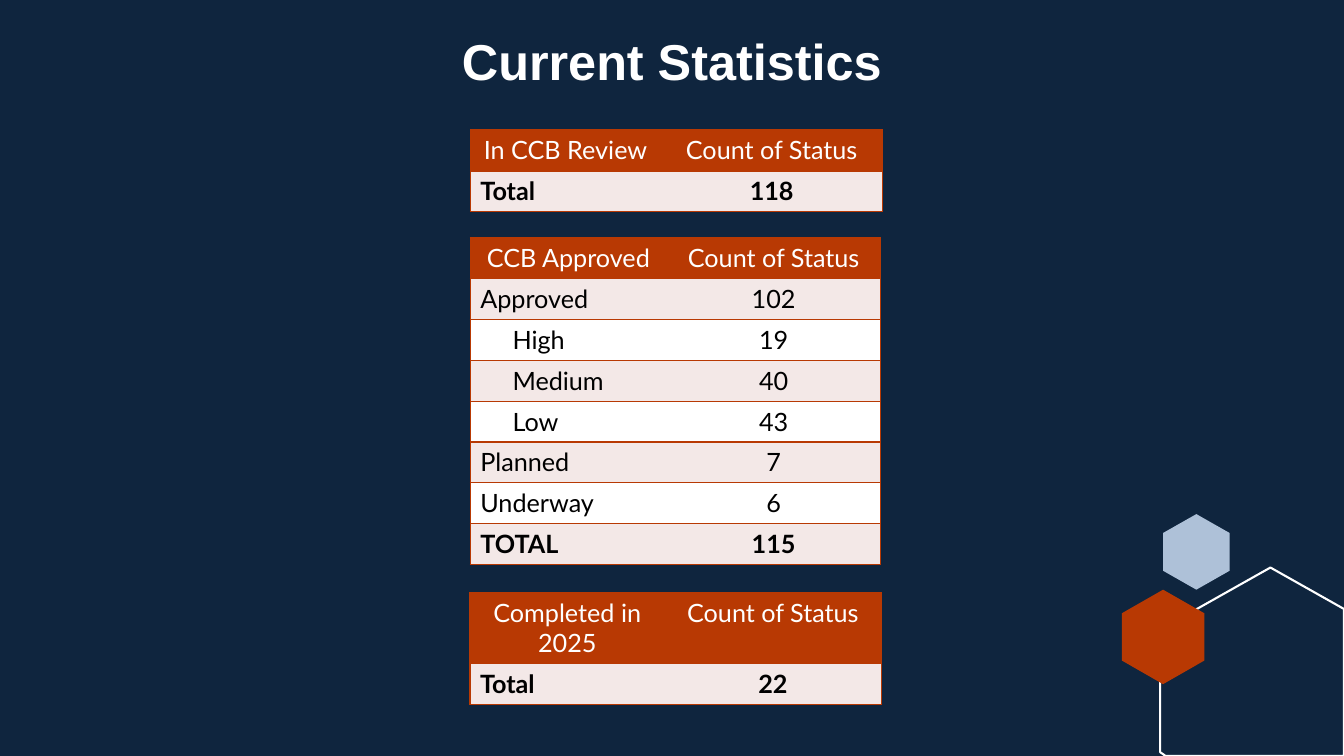
from lxml.etree import SubElement as Sub
from pptx import Presentation
from pptx.dml.color import RGBColor
from pptx.enum.text import MSO_ANCHOR as Anchor, PP_ALIGN as Align
from pptx.oxml.ns import qn
from pptx.util import Pt

NAVY, RUST, PALE, BLUE = "0F253E", "B83903", "F3E8E7", "AEC1D8"
WHITE, BLACK = "FFFFFF", "000000"
HEX = [(0.5, 0), (1, 0.25), (1, 0.75), (0.5, 1), (0, 0.75), (0, 0.25)]
CUT = [(0.6, 0), (1, 0.22), (1, 1), (0.03, 1), (0, 0.98), (0, 0.33)]
STATUS = "Count of Status"
REVIEW = [("In CCB Review", STATUS), ("Total", "118")]
PASSED = [
    ("CCB Approved", STATUS),
    ("Approved", "102"),
    ("High", "19"),
    ("Medium", "40"),
    ("Low", "43"),
    ("Planned", "7"),
    ("Underway", "6"),
    ("TOTAL", "115"),
]
DONE = [("Completed in 2025", STATUS), ("Total", "22")]
NESTED = {"High", "Medium", "Low"}


def paint(fmt, color):
    """Give a fill or a font colour format a solid hex colour."""
    fmt.rgb = RGBColor.from_string(color)


def style(par, font, size, color, bold, align):
    """Format a paragraph and its runs."""
    par.alignment = align
    for run in par.runs:
        run.font.name, run.font.size, run.font.bold = font, Pt(size), bold
        paint(run.font.color, color)


def add_outline(slide, box, points, fill=None, line=None):
    """Draw a closed outline from points given as fractions of the box."""
    left, top, width, height = box
    spots = [(Pt(left + x * width), Pt(top + y * height)) for x, y in points]
    pen = slide.shapes.build_freeform(*spots[0])
    pen.add_line_segments(spots[1:], close=True)
    shape = pen.convert_to_shape()
    shape.shadow.inherit = False
    if fill:
        shape.fill.solid()
        paint(shape.fill.fore_color, fill)
    else:
        shape.fill.background()
    if line:
        paint(shape.line.color, line)
        shape.line.width = Pt(1.5)
    else:
        shape.line.fill.background()


def add_decor(slide, box):
    """Place the three hexagons of the corner inside the box."""
    left, top, width, height = box
    add_outline(slide, (left + 29.5, top, 47.5, 54), HEX, BLUE)
    add_outline(slide, (left + 27.4, top + 38.2, width - 27.4, height - 38.2), CUT, line=WHITE)
    add_outline(slide, (left, top + 54, 59, 67.5), HEX, RUST)


def add_title(slide, box, text):
    """Place the centred heading in the box."""
    frame = slide.shapes.add_textbox(*map(Pt, box)).text_frame
    frame.word_wrap = True
    frame.vertical_anchor = Anchor.MIDDLE
    frame.text = text
    par = frame.paragraphs[0]
    par.line_spacing = 0.9
    style(par, "Arial", 36, WHITE, True, Align.CENTER)


def set_edges(cell, col):
    """Draw the outer and row lines of a cell, with none between columns."""
    props = cell._tc.get_or_add_tcPr()
    bare = "lnL" if col else "lnR"
    for spot, side in enumerate(("lnL", "lnR", "lnT", "lnB")):
        edge = Sub(props, qn(f"a:{side}"), w=str(Pt(1)))
        if side == bare:
            Sub(edge, qn("a:noFill"))
        else:
            Sub(Sub(edge, qn("a:solidFill")), qn("a:srgbClr"), val=RUST)
        props.insert(spot, edge)


def add_stats(slide, box, split, rows, head=29.2):
    """Place a two-column table in the box, with its first column split wide."""
    left, top, width, height = box
    frame = slide.shapes.add_table(len(rows), 2, *map(Pt, box))
    table = frame.table
    table.columns[0].width, table.columns[1].width = Pt(split), Pt(width - split)
    step = (height - head) / (len(rows) - 1)
    for i, row in enumerate(rows):
        table.rows[i].height = Pt(step if i else head)
        for j, text in enumerate(row):
            cell = table.cell(i, j)
            cell.text = text
            cell.fill.solid()
            paint(cell.fill.fore_color, (PALE if i % 2 else WHITE) if i else RUST)
            if text in NESTED:
                cell.margin_left = Pt(30.2)
            bold = row[0].lower() == "total"
            align = Align.LEFT if i and not j else Align.CENTER
            style(cell.text_frame.paragraphs[0], "Lato", 18, BLACK if i else WHITE, bold, align)
            set_edges(cell, j)


def main():
    """Build the slide and save it."""
    deck = Presentation()
    deck.slide_width, deck.slide_height = Pt(960), Pt(540)
    slide = deck.slides.add_slide(deck.slide_layouts[6])
    slide.background.fill.solid()
    paint(slide.background.fill.fore_color, NAVY)
    add_decor(slide, (801.3, 367.2, 158.7, 172.8))
    add_title(slide, (318, 21.6, 324, 49), "Current Statistics")
    add_stats(slide, (336, 92.9, 294.5, 58.4), 136, REVIEW)
    add_stats(slide, (335.9, 169.7, 293.3, 233.6), 140.2, PASSED)
    add_stats(slide, (335.7, 423.3, 293.8, 79.8), 139, DONE, 50.6)
    deck.save("out.pptx")


if __name__ == "__main__":
    main()
